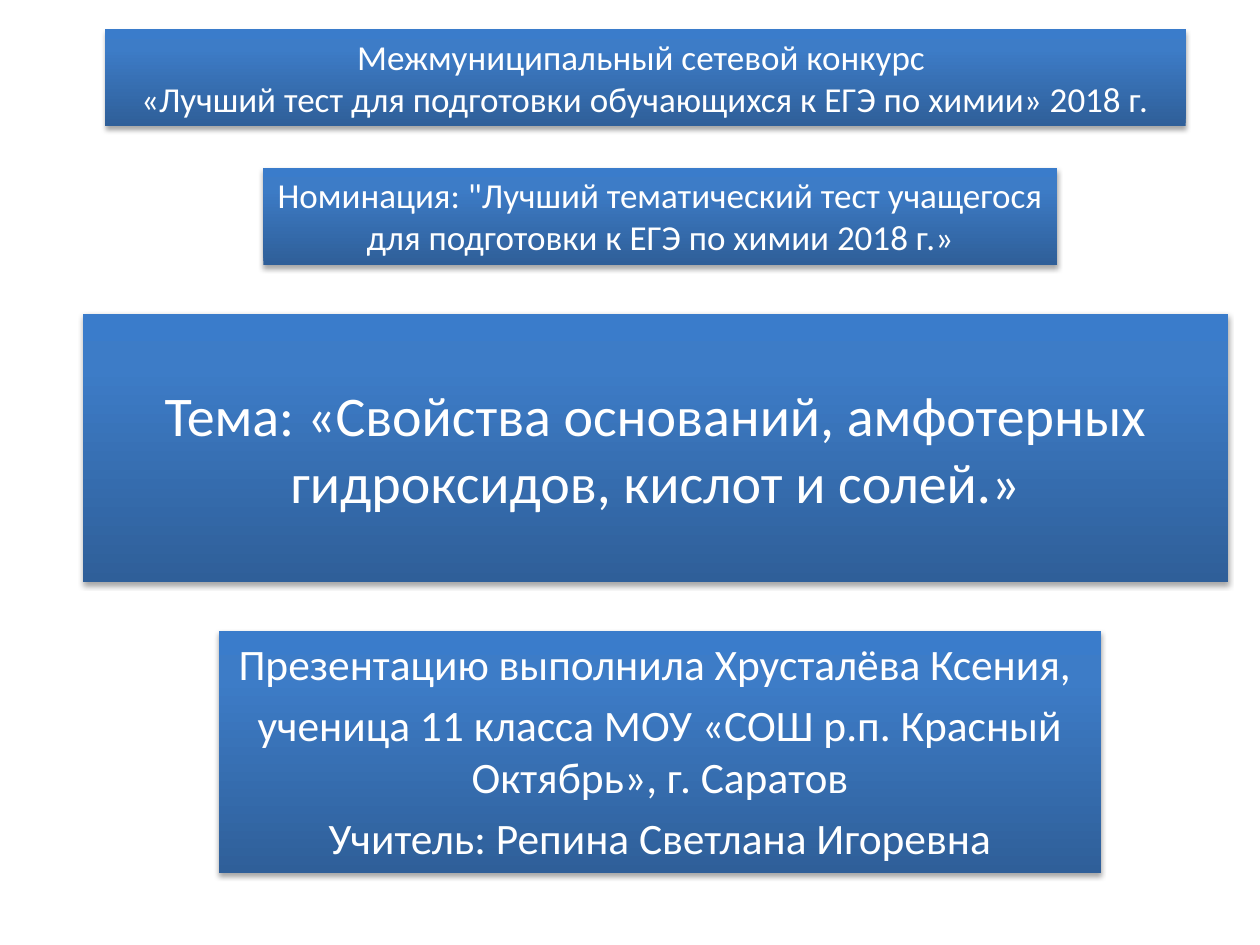
from lxml import etree
from pptx import Presentation
from pptx import util as u
from pptx.dml.color import RGBColor
from pptx.enum import shapes, text
from pptx.oxml import ns

HUES = {"dark": "2F5F99", "mid": "3D7CC7", "light": "3A7CCB", "text": "FFFFFF", "shade": "000000"}
STOPS = {0: "dark", 80: "mid", 100: "light"}


class Deck:
    """Hold the style and the current slide of the title page."""

    def __init__(self):
        self.prs = Presentation()
        self.prs.slide_width, self.prs.slide_height = u.Inches(10), u.Inches(7.5)
        self.slide = self.prs.slides.add_slide(self.prs.slide_layouts[6])
        self.font = {"name": "Calibri"}
        self.frame = {"word_wrap": True}

    def apply(self, item, style):
        for key, value in style.items():
            setattr(item, key, value)

    def node(self, root, tag, **attrs):
        return etree.SubElement(root, ns.qn(tag), {k: str(v) for k, v in attrs.items()})

    def color(self, root, hue, **attrs):
        return self.node(root, "a:srgbClr", val=HUES[hue], **attrs)

    def paint(self, shape):
        shape.line.fill.background()
        shape.fill.gradient()
        shape.fill.gradient_angle = 90
        props = shape.element.spPr
        stops = props.find(".//" + ns.qn("a:gsLst"))
        stops.clear()
        for pos, hue in STOPS.items():
            self.color(self.node(stops, "a:gs", pos=pos * 1000), hue)
        shape.shadow.inherit = False
        glow = self.node(props.find(ns.qn("a:effectLst")), "a:outerShdw", blurRad=u.Pt(3.1),
                         dist=u.Pt(1.8), dir=90 * 60000, rotWithShape=0)
        self.node(self.color(glow, "shade"), "a:alpha", val=35000)

    def panel(self, box, lines, size, anchor=text.MSO_ANCHOR.TOP, gap=0):
        shape = self.slide.shapes.add_shape(
            shapes.MSO_SHAPE.RECTANGLE, *(u.Inches(n) for n in box))
        self.paint(shape)
        frame = shape.text_frame
        self.apply(frame, {**self.frame, "vertical_anchor": anchor})
        frame.text = "\n".join(lines)
        for i, para in enumerate(frame.paragraphs):
            self.apply(para, {"alignment": text.PP_ALIGN.CENTER,
                              "space_before": u.Pt(gap if i else 0)})
            self.apply(para.font, {**self.font, "size": u.Pt(size)})
            para.font.color.rgb = RGBColor.from_string(HUES["text"])


def main():
    deck = Deck()
    deck.panel((0.66, 2.49, 9.09, 2.13),
               ["Тема: «Свойства оснований, амфотерных гидроксидов, кислот и солей.»"],
               32, text.MSO_ANCHOR.MIDDLE)
    deck.panel((1.74, 5.01, 7, 1.92),
               ["Презентацию выполнила Хрусталёва Ксения, ",
                "ученица 11 класса МОУ «СОШ р.п. Красный Октябрь», г. Саратов",
                "Учитель: Репина Светлана Игоревна"], 24.8, gap=5)
    deck.panel((0.83, 0.23, 8.58, 0.77),
               ["Межмуниципальный сетевой конкурс \v"
                "«Лучший тест для подготовки обучающихся к ЕГЭ по химии» 2018 г."], 20)
    deck.panel((2.09, 1.33, 6.3, 0.77),
               ['Номинация: "Лучший тематический тест '
                "учащегося для подготовки к ЕГЭ по химии 2018 г.»"], 20)
    deck.prs.save("out.pptx")


if __name__ == "__main__":
    main()
